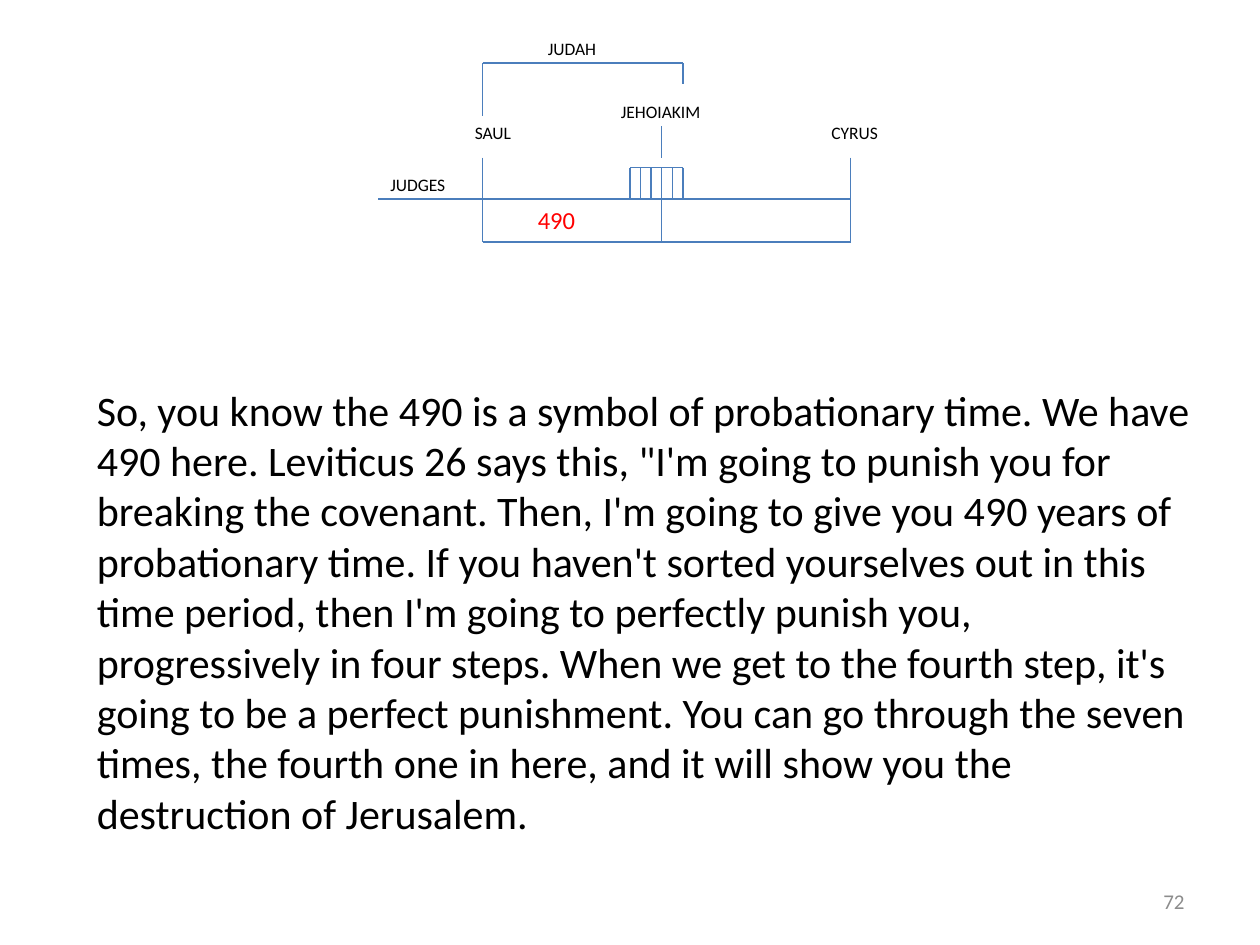
from lxml.etree import SubElement
from pptx import Presentation
from pptx.dml.color import RGBColor
from pptx.enum.shapes import MSO_CONNECTOR
from pptx.enum.text import MSO_ANCHOR, PP_ALIGN
from pptx.oxml.ns import qn
from pptx.util import Inches, Pt

COLORS = {"line": "4B7EBC", "text": "000000", "accent": "FF0000", "number": "8C8C8C"}
FONT = "Calibri"

START, SAUL, JEHOIAKIM, CYRUS = 3, 3.83, 5.25, 6.75
KINGS_LEFT, KINGS_RIGHT, KING_COUNT = 5, 5.42, 6
JUDAH_Y, KINGS_Y, TIMELINE_Y, PERIOD_Y = 0.5, 1.33, 1.58, 1.92

HORIZONTALS = [
    (KINGS_LEFT, KINGS_RIGHT, KINGS_Y),
    (START, SAUL, TIMELINE_Y),
    (SAUL, CYRUS, TIMELINE_Y),
    (SAUL, CYRUS, PERIOD_Y),
    (SAUL, KINGS_RIGHT, JUDAH_Y),
]
VERTICALS = [
    (SAUL, JUDAH_Y, 0.92),
    (KINGS_RIGHT, JUDAH_Y, 0.67),
    (SAUL, 1.25, PERIOD_Y),
    (JEHOIAKIM, 1, 1.25),
    (JEHOIAKIM, TIMELINE_Y, PERIOD_Y),
    (CYRUS, 1.25, PERIOD_Y),
]
LABELS = [
    ("SAUL", 3.67, 0.92, 0.58),
    ("CYRUS", 6.5, 0.92, 0.83),
    ("JEHOIAKIM", 4.83, 0.75, 0.84),
    ("JUDAH", 4.25, 0.25, 1),
    ("JUDGES", 3, 1.33, 1),
]
PASSAGE = (
    "So, you know the 490 is a symbol of probationary time. We have 490 here. "
    "Leviticus 26 says this, \"I'm going to punish you for breaking the covenant. "
    "Then, I'm going to give you 490 years of probationary time. If you haven't "
    "sorted yourselves out in this time period, then I'm going to perfectly punish "
    "you, progressively in four steps. When we get to the fourth step, it's going "
    "to be a perfect punishment. You can go through the seven times, the fourth "
    "one in here, and it will show you the destruction of Jerusalem."
)


def add_line(slide, x1, y1, x2, y2):
    line = slide.shapes.add_connector(
        MSO_CONNECTOR.STRAIGHT, Inches(x1), Inches(y1), Inches(x2), Inches(y2))
    line.line.color.rgb = RGBColor.from_string(COLORS["line"])
    line.line.width = Pt(0.75)
    SubElement(line._element.spPr, qn("a:effectLst"))


def add_text(slide, text, left, top, width, height, size, color="text", wrap=True):
    box = slide.shapes.add_textbox(
        Inches(left), Inches(top), Inches(width), Inches(height))
    frame = box.text_frame
    frame.word_wrap = wrap
    frame.text = text
    font = frame.paragraphs[0].runs[0].font
    font.name = FONT
    font.size = Pt(size)
    font.color.rgb = RGBColor.from_string(COLORS[color])
    return frame


def main():
    deck = Presentation()
    deck.slide_width, deck.slide_height = Inches(10), Inches(7.5)
    slide = deck.slides.add_slide(deck.slide_layouts[6])

    king_gap = (KINGS_RIGHT - KINGS_LEFT) / (KING_COUNT - 1)
    king_bars = [(KINGS_LEFT + i * king_gap, KINGS_Y, TIMELINE_Y)
                 for i in range(KING_COUNT)]
    for x, top, bottom in king_bars + VERTICALS:
        add_line(slide, x, top, x, bottom)
    for left, right, y in HORIZONTALS:
        add_line(slide, left, y, right, y)

    for name, left, top, width in LABELS:
        add_text(slide, name, left, top, width, 0.27, 10, wrap=name != "JEHOIAKIM")
    add_text(slide, "490", 4.17, 1.58, 0.83, 0.34, 14, "accent")
    add_text(slide, PASSAGE, 0.67, 3, 8.92, 4.04, 24)

    page_number = add_text(slide, "72", 7.17, 6.95, 2.33, 0.4, 12, "number")
    page_number.vertical_anchor = MSO_ANCHOR.MIDDLE
    page_number.paragraphs[0].alignment = PP_ALIGN.RIGHT

    deck.save("out.pptx")


if __name__ == "__main__":
    main()
